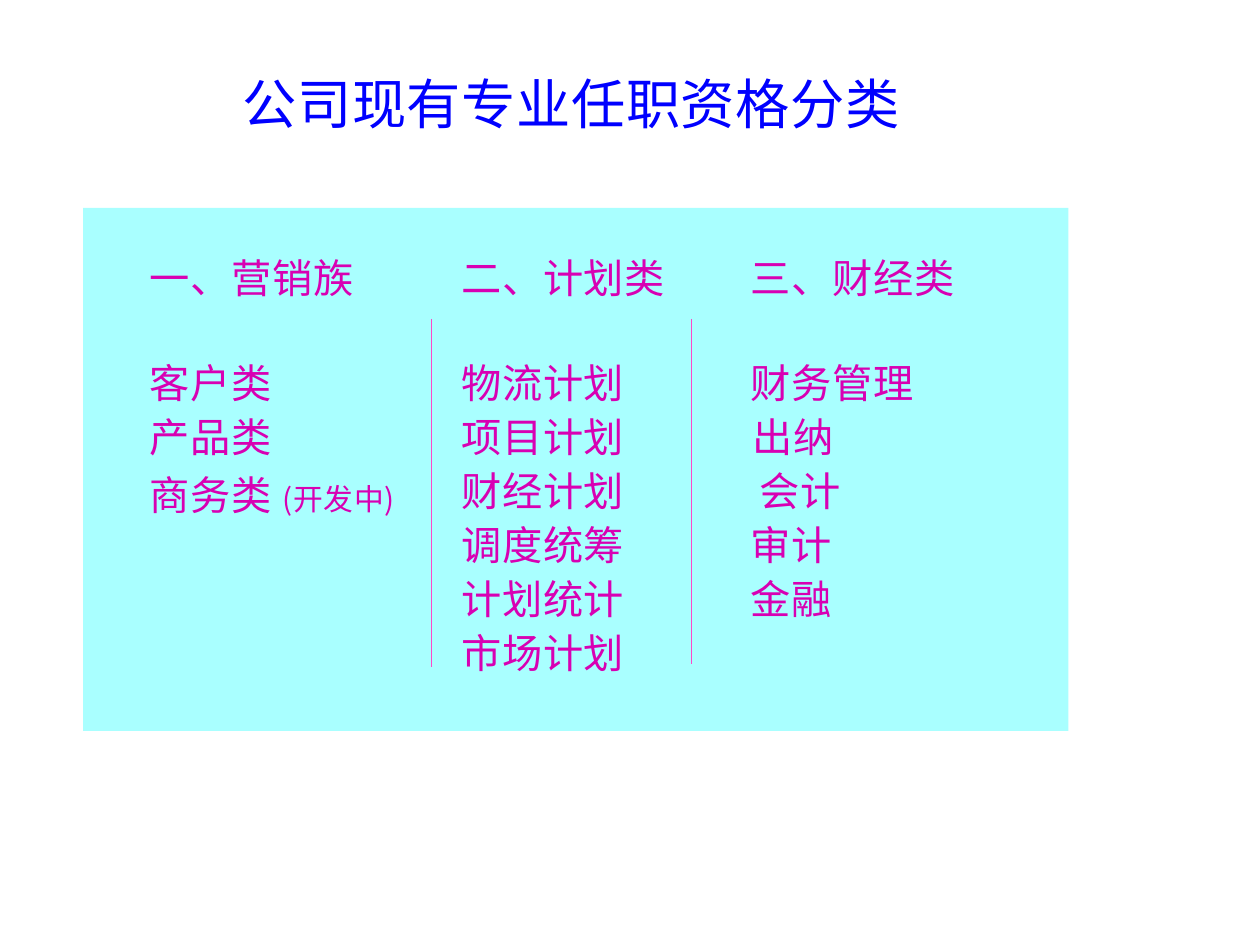
from dataclasses import dataclass

from lxml import etree
from pptx import Presentation
from pptx.dml.color import RGBColor
from pptx.enum import shapes, text
from pptx.oxml import ns
from pptx.util import Pt


@dataclass(frozen=True)
class Theme:
    font: str = "Noto Sans CJK SC"
    title_color: RGBColor = RGBColor(0x00, 0x00, 0xFF)
    body_color: RGBColor = RGBColor(0xD8, 0x00, 0xB3)
    panel_color: RGBColor = RGBColor(0xA9, 0xFF, 0xFF)
    divider_color: RGBColor = RGBColor(0xFF, 0x48, 0xC8)
    title_size: float = 31
    body_size: float = 23
    note_size: float = 17
    tracking: float = 0.4


THEME = Theme()
TITLE = "公司现有专业任职资格分类"
COLUMNS = [
    {"left": 85.7, "width": 158, "heading": "一、营销族",
     "items": ["客户类", "产品类", "商务类 "], "note": "(开发中)"},
    {"left": 263.5, "width": 120, "heading": "二、计划类",
     "items": ["物流计划", "项目计划", "财经计划", "调度统筹", "计划统计", "市场计划"]},
    {"left": 429, "width": 120, "heading": "三、财经类",
     "items": ["财务管理", "出纳", "会计", "审计", "金融"],
     "indents": {"出纳": 1, "会计": 5}},
]
PANEL = (47.5, 118.8, 563, 298.8)
DIVIDERS = [(246.6, 380.9), (394.9, 379.4)]
DIVIDER_TOP = 182.2
COLUMN_TOP = 141.5
LINE_PITCH = 30.8
HEADING_GAP = 29.2
NOTE_GAP = 2.3


def add_text_frame(slide, left, top, width, height):
    frame = slide.shapes.add_textbox(Pt(left), Pt(top), Pt(width), Pt(height)).text_frame
    frame.margin_left = frame.margin_top = frame.margin_right = frame.margin_bottom = 0
    frame.vertical_anchor = text.MSO_ANCHOR.TOP
    frame.word_wrap = True
    return frame


def style_paragraph(paragraph, size, color):
    font = paragraph.font
    font.size = Pt(size)
    font.name = THEME.font
    font.color.rgb = color
    properties = paragraph._p.pPr.find(ns.qn("a:defRPr"))
    properties.set("spc", str(round(THEME.tracking * 100)))
    east_asian = etree.Element(ns.qn("a:ea"), typeface=THEME.font)
    properties.find(ns.qn("a:latin")).addnext(east_asian)


def add_column(slide, column):
    lines = [column["heading"], *column["items"]]
    note = column.get("note")
    height = len(lines) * LINE_PITCH + HEADING_GAP
    frame = add_text_frame(slide, column["left"], COLUMN_TOP, column["width"], height)
    for index, line in enumerate(lines):
        paragraph = frame.add_paragraph() if index else frame.paragraphs[0]
        paragraph.add_run().text = line
        paragraph.line_spacing = Pt(LINE_PITCH)
        if index == 1:
            paragraph.space_before = Pt(HEADING_GAP)
        indent = column.get("indents", {}).get(line)
        if indent:
            paragraph._p.get_or_add_pPr().set("marL", str(Pt(indent)))
        if note and index == len(lines) - 1:
            paragraph.space_before = Pt(NOTE_GAP)
            run = paragraph.add_run()
            run.text = note
            run.font.size = Pt(THEME.note_size)
        style_paragraph(paragraph, THEME.body_size, THEME.body_color)


def add_divider(slide, x, bottom):
    divider = slide.shapes.add_connector(
        shapes.MSO_CONNECTOR.STRAIGHT, Pt(x), Pt(DIVIDER_TOP), Pt(x), Pt(bottom))
    divider.line.color.rgb = THEME.divider_color
    divider.line.width = Pt(0.6)
    etree.SubElement(divider._element.spPr, ns.qn("a:effectLst"))


def main():
    presentation = Presentation()
    presentation.slide_width, presentation.slide_height = Pt(720), Pt(540)
    slide = presentation.slides.add_slide(presentation.slide_layouts[6])

    panel = slide.shapes.add_shape(shapes.MSO_SHAPE.RECTANGLE, *map(Pt, PANEL))
    panel.shadow.inherit = False
    panel.fill.solid()
    panel.fill.fore_color.rgb = THEME.panel_color
    panel.line.fill.background()

    title = add_text_frame(slide, 138.5, 40.4, 400, 45).paragraphs[0]
    title.add_run().text = TITLE
    style_paragraph(title, THEME.title_size, THEME.title_color)

    for column in COLUMNS:
        add_column(slide, column)
    for x, bottom in DIVIDERS:
        add_divider(slide, x, bottom)

    presentation.save("out.pptx")


if __name__ == "__main__":
    main()
